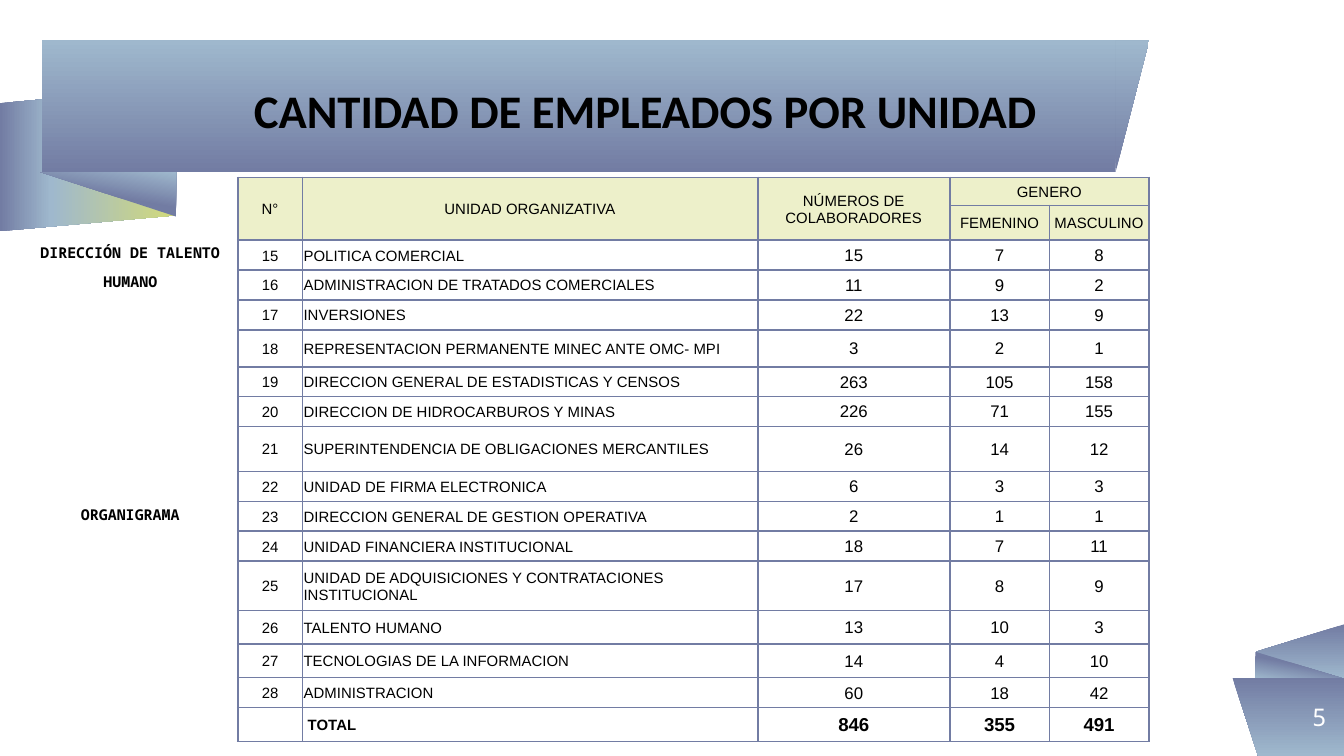
"""Build the slide with the staff count per unit."""
from lxml import etree
from pptx import Presentation
from pptx.dml.color import RGBColor
from pptx.enum.shapes import MSO_SHAPE
from pptx.enum.text import MSO_ANCHOR, MSO_AUTO_SIZE, PP_ALIGN
from pptx.oxml.ns import qn
from pptx.util import Pt

LEFT, MID, RIGHT = PP_ALIGN.LEFT, PP_ALIGN.CENTER, PP_ALIGN.RIGHT
TOP, CENTER = MSO_ANCHOR.TOP, MSO_ANCHOR.MIDDLE
RECT, WEDGE = MSO_SHAPE.RECTANGLE, MSO_SHAPE.RIGHT_TRIANGLE
PEAK, SLANT = MSO_SHAPE.ISOSCELES_TRIANGLE, MSO_SHAPE.PARALLELOGRAM
NAVY = RGBColor(0x72, 0x7C, 0xA3)
SKY = RGBColor(0x9F, 0xB8, 0xCD)
LIME = RGBColor(0xD2, 0xDA, 0x7A)
CREAM = RGBColor(0xED, 0xF0, 0xCA)
BLACK = RGBColor(0, 0, 0)
WHITE = RGBColor(255, 255, 255)
MONO = "Noto Sans Mono"

TITLE = "CANTIDAD DE EMPLEADOS POR UNIDAD"
PAGE = "5"
SIDE = [("DIRECCIÓN DE TALENTO", 0), ("HUMANO", 4.6), ("ORGANIGRAMA", 114)]
HEAD = [
    ("N°", "UNIDAD ORGANIZATIVA", "NÚMEROS DE COLABORADORES", "GENERO", ""),
    ("", "", "", "FEMENINO", "MASCULINO"),
]
UNITS = [
    (15, "POLITICA COMERCIAL", 15, 7, 8),
    (16, "ADMINISTRACION DE TRATADOS COMERCIALES", 11, 9, 2),
    (17, "INVERSIONES", 22, 13, 9),
    (18, "REPRESENTACION PERMANENTE MINEC ANTE OMC- MPI", 3, 2, 1),
    (19, "DIRECCION GENERAL DE ESTADISTICAS Y CENSOS", 263, 105, 158),
    (20, "DIRECCION DE HIDROCARBUROS Y MINAS", 226, 71, 155),
    (21, "SUPERINTENDENCIA DE OBLIGACIONES MERCANTILES", 26, 14, 12),
    (22, "UNIDAD DE FIRMA ELECTRONICA", 6, 3, 3),
    (23, "DIRECCION GENERAL DE GESTION OPERATIVA", 2, 1, 1),
    (24, "UNIDAD FINANCIERA INSTITUCIONAL", 18, 7, 11),
    (25, "UNIDAD DE ADQUISICIONES Y CONTRATACIONES INSTITUCIONAL", 17, 8, 9),
    (26, "TALENTO HUMANO", 13, 10, 3),
    (27, "TECNOLOGIAS DE LA INFORMACION", 14, 4, 10),
    (28, "ADMINISTRACION", 60, 18, 42),
]
TOTAL = ("", "TOTAL", 846, 355, 491)
COLS = [34.6, 244, 102.9, 53.3, 53.3]
ROWS = [15, 18.2, 16, 16, 16, 19.8, 16, 16, 24.2, 16, 16, 16, 26.5, 18, 18, 16, 18.2]
SPANS = [(0, 0, 1, 0), (0, 1, 1, 1), (0, 2, 1, 2), (0, 3, 0, 4)]

DUO = [(0, NAVY), (100, SKY)]
FOLD = [(0, NAVY), (47, NAVY), (100, SKY)]
TAIL = [(0, NAVY), (29, SKY), (100, LIME)]
RIBBON = [
    (SLANT, (8.6, 38.2, 77, 94.3), 270, True, 0.11, TAIL, 90),
    (WEDGE, (21.6, 92.2, 72.7, 23.8), 180, False, None, FOLD, 100),
    (RECT, (22.3, 21.6, 575.3, 70.6), 180, True, None, DUO, 90),
    (PEAK, (597.6, 21.6, 18, 70.6), 180, False, 1, DUO, 90),
    (PEAK, (681.8, 325.4, 29.5, 47.5), 270, False, 0.5, DUO, 180),
    (WEDGE, (672.5, 349.2, 47.5, 14.4), 0, False, None, FOLD, 100),
    (RECT, (673.2, 363, 46.8, 41.8), 180, False, None, DUO, 270),
    (PEAK, (660.2, 363, 13.7, 41.8), 180, True, 1, DUO, 270),
]


def put(frame, text, size=8, font="Arial", color=BLACK, bold=False,
        align=MID, line=None, before=0, more=False):
    para = frame.add_paragraph() if more else frame.paragraphs[0]
    para.alignment, para.space_before = align, Pt(before)
    if line:
        para.line_spacing = line
    if not text:
        etree.SubElement(para._p, qn("a:endParaRPr"), sz=str(size * 100))
        return None
    run = para.add_run()
    run.text = text
    face = run.font
    face.size, face.name, face.bold = Pt(size), font, bold
    face.color.rgb = color
    return run


def frame_up(shape, box, anchor):
    shape.left, shape.top, shape.width, shape.height = map(Pt, box)
    frame = shape.text_frame
    frame.word_wrap, frame.auto_size = True, MSO_AUTO_SIZE.NONE
    frame.vertical_anchor = anchor
    frame.margin_left = frame.margin_right = 0
    frame.margin_top = frame.margin_bottom = 0
    return frame


def blend(shape, stops, angle):
    shape.fill.gradient()
    grad = shape._element.spPr.find(qn("a:gradFill"))
    grad.set("rotWithShape", "1")
    chain = grad.find(qn("a:gsLst"))
    for stop in list(chain):
        chain.remove(stop)
    for pos, color in stops:
        stop = etree.SubElement(chain, qn("a:gs"), pos=str(pos * 1000))
        etree.SubElement(stop, qn("a:srgbClr"), val=str(color))
    grad.find(qn("a:lin")).set("ang", str(angle * 60000))


def fold(slide, kind, box, turn, flip, bend, stops, angle):
    shape = slide.shapes.add_shape(kind, *map(Pt, box))
    shape.shadow.inherit = False
    shape.line.fill.background()
    shape.rotation = turn
    if bend is not None:
        shape.adjustments[0] = bend
    if flip:
        shape._element.spPr.find(qn("a:xfrm")).set("flipH", "1")
    blend(shape, stops, angle)


def shade(run):
    glow = etree.Element(qn("a:effectLst"))
    cast = etree.SubElement(glow, qn("a:outerShdw"), blurRad="38100",
                            dist="38100", dir="2700000", algn="tl")
    tint = etree.SubElement(cast, qn("a:srgbClr"), val=str(BLACK))
    etree.SubElement(tint, qn("a:alpha"), val="43000")
    run._r.rPr.find(qn("a:solidFill")).addnext(glow)


def edge(cell):
    props = cell._tc.get_or_add_tcPr()
    for side in ("lnL", "lnR", "lnT", "lnB"):
        line = etree.SubElement(props, qn("a:" + side), w=str(Pt(1)))
        fill = etree.SubElement(line, qn("a:solidFill"))
        etree.SubElement(fill, qn("a:srgbClr"), val=str(NAVY))


def fill_cell(cell, text, row, col):
    head, last = row < len(HEAD), row == len(ROWS) - 1
    cell.margin_left = cell.margin_right = cell.margin_top = Pt(0.7)
    cell.margin_bottom = 0
    cell.vertical_anchor = CENTER
    if last and col == 1:
        cell.margin_left = Pt(2.9)
    edge(cell)
    if head:
        cell.fill.solid()
        cell.fill.fore_color.rgb = CREAM
    else:
        cell.fill.background()
    size = 8 if head or col < 2 else 10 if last else 9
    put(cell.text_frame, str(text), size=size, bold=last,
        align=LEFT if col == 1 and not head else MID)


def add_grid(slide):
    data = HEAD + UNITS + [TOTAL]
    grid = slide.shapes.add_table(
        len(ROWS), len(COLS), Pt(127.4), Pt(95), Pt(sum(COLS)), Pt(sum(ROWS))).table
    grid.first_row = grid.horz_banding = False
    for col, width in zip(grid.columns, COLS):
        col.width = Pt(width)
    for row, height in zip(grid.rows, ROWS):
        row.height = Pt(height)
    for r, items in enumerate(data):
        for c, text in enumerate(items):
            fill_cell(grid.cell(r, c), text, r, c)
    for r, c, low, far in SPANS:
        grid.cell(r, c).merge(grid.cell(low, far))


def main():
    deck = Presentation()
    deck.slide_width, deck.slide_height = Pt(720), Pt(405)
    slide = deck.slides.add_slide(deck.slide_layouts[5])
    title = slide.shapes.title
    for part in RIBBON:
        fold(slide, *part)
    slide.shapes._spTree.append(title._element)
    frame = frame_up(title, (76.3, 25.2, 538.6, 70.6), CENTER)
    shade(put(frame, TITLE, size=25, font="Calibri", bold=True, line=0.9))
    page = slide.shapes.add_textbox(0, 0, 0, 0)
    frame = frame_up(page, (672.5, 363, 38.2, 41.8), CENTER)
    put(frame, PAGE, size=13, font=MONO, color=WHITE, align=RIGHT)
    add_grid(slide)
    side = slide.shapes.add_textbox(0, 0, 0, 0)
    frame = frame_up(side, (0, 128.9, 139.8, 79.2), TOP)
    for i, (text, gap) in enumerate(SIDE):
        put(frame, text, font=MONO, bold=True, line=1.15, before=gap, more=i > 0)
    deck.save("out.pptx")


if __name__ == "__main__":
    main()
